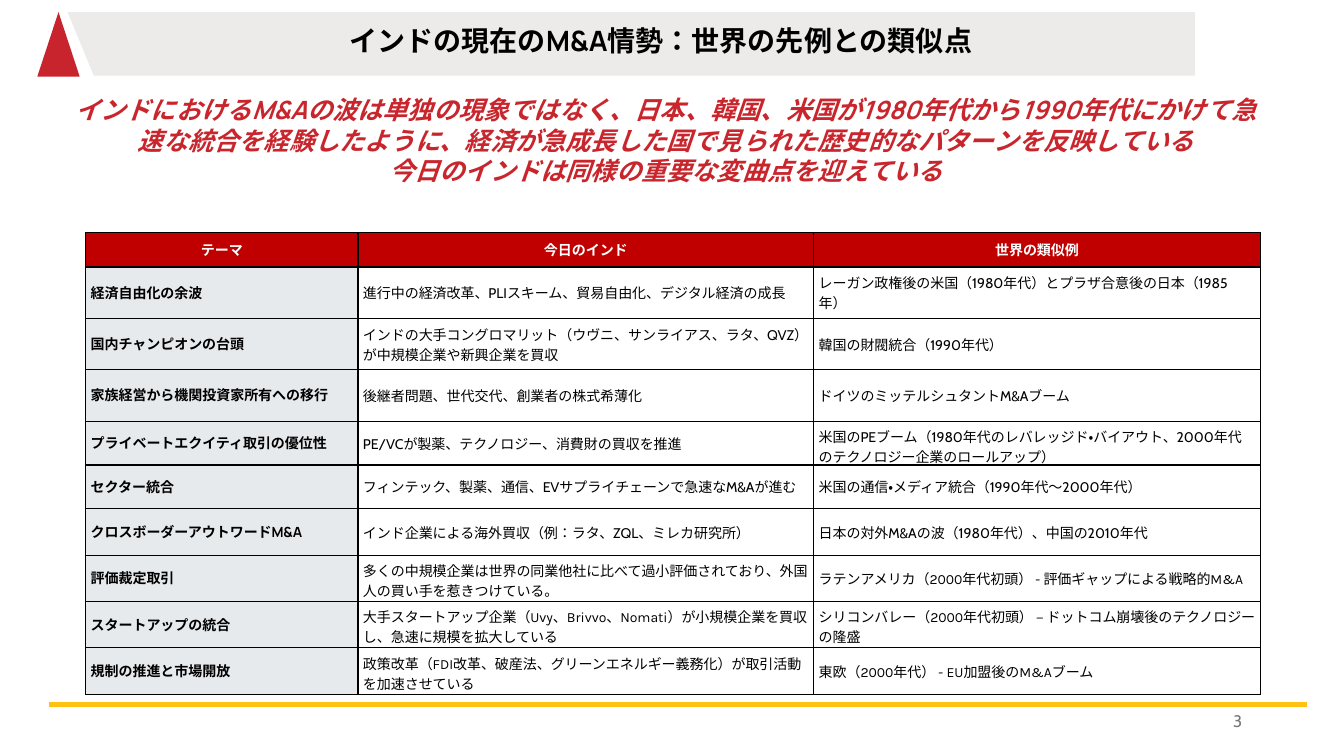
from lxml.etree import SubElement
from pptx import Presentation
from pptx.dml.color import RGBColor
from pptx.enum.lang import MSO_LANGUAGE_ID as LANGUAGE
from pptx.enum.shapes import MSO_CONNECTOR, MSO_SHAPE
from pptx.enum.text import MSO_ANCHOR as ANCHOR, PP_ALIGN as ALIGN
from pptx.oxml import parse_xml
from pptx.oxml.ns import nsdecls, qn
from pptx.util import Inches, Pt

TITLE = "インドの現在のM&A情勢：世界の先例との類似点"
MESSAGE = [
    "インドにおけるM&Aの波は単独の現象ではなく、日本、韓国、米国が1980年代から1990年代にかけて急速な統合を経験したように、経済が急成長した国で見られた歴史的なパターンを反映している",
    "今日のインドは同様の重要な変曲点を迎えている",
]
PAGE_NUMBER = "3"
HEADINGS = ("テーマ", "今日のインド", "世界の類似例")
# theme, India today, global parallel, row height, body font
THEMES = [
    ("経済自由化の余波", "進行中の経済改革、PLIスキーム、貿易自由化、デジタル経済の成長",
     "レーガン政権後の米国（1980年代）とプラザ合意後の日本（1985年）", 0.51, "Cabin"),
    ("国内チャンピオンの台頭",
     "インドの大手コングロマリット（ウヴニ、サンライアス、ラタ、QVZ）が中規模企業や新興企業を買収",
     "韓国の財閥統合（1990年代）", 0.51, "Cabin"),
    ("家族経営から機関投資家所有への移行", "後継者問題、世代交代、創業者の株式希薄化",
     "ドイツのミッテルシュタントM&Aブーム", 0.51, "Cabin"),
    ("プライベートエクイティ取引の優位性", "PE/VCが製薬、テクノロジー、消費財の買収を推進",
     "米国のPEブーム（1980年代のレバレッジド・バイアウト、2000年代のテクノロジー企業のロールアップ）",
     0.43, "Cabin"),
    ("セクター統合", "フィンテック、製薬、通信、EVサプライチェーンで急速なM&Aが進む",
     "米国の通信・メディア統合（1990年代～2000年代）", 0.43, "Cabin"),
    ("クロスボーダーアウトワードM&A", "インド企業による海外買収（例：ラタ、ZQL、ミレカ研究所）",
     "日本の対外M&Aの波（1980年代）、中国の2010年代", 0.46, "Cabin"),
    ("評価裁定取引", "多くの中規模企業は世界の同業他社に比べて過小評価されており、外国人の買い手を惹きつけている。",
     "ラテンアメリカ（2000年代初頭） - 評価ギャップによる戦略的M&A", 0.46, "Karla"),
    ("スタートアップの統合",
     "大手スタートアップ企業（Uvy、Brivvo、Nomati）が小規模企業を買収し、急速に規模を拡大している",
     "シリコンバレー（2000年代初頭） – ドットコム崩壊後のテクノロジーの隆盛", 0.46, "Karla"),
    ("規制の推進と市場開放",
     "政策改革（FDI改革、破産法、グリーンエネルギー義務化）が取引活動を加速させている",
     "東欧（2000年代） - EU加盟後のM&Aブーム", 0.46, "Karla"),
]
COLUMN_WIDTHS = (2.7, 4.52, 4.43)
HEADING_HEIGHT = 0.34
BANNER = [(11.85, 0.12), (0.67, 0.12), (0.93, 0.75), (11.85, 0.75)]
MARGINS = ("margin_left", "margin_top", "margin_right", "margin_bottom")


def rgb(code):
    return RGBColor.from_string(code)


def style(paragraph, text, align, font, size, color, **flags):
    paragraph.alignment = align
    run = paragraph.add_run()
    run.text = text
    formats = {"name": font, "size": Pt(size), "language_id": LANGUAGE.JAPANESE}
    for key, value in {**formats, **flags}.items():
        setattr(run.font, key, value)
    run.font.color.rgb = rgb(color)
    if font == "Manrope":
        SubElement(run.font._element, qn("a:ea"), typeface=font)


def add_text(box, lines, align, font, size, color, **flags):
    frame = slide.shapes.add_textbox(*map(Inches, box)).text_frame
    frame.word_wrap = True
    for index, line in enumerate(lines):
        paragraph = frame.add_paragraph() if index else frame.paragraphs[0]
        style(paragraph, line, align, font, size, color, **flags)
    return frame


def paint(shape, color):
    shape.shadow.inherit = False
    shape.fill.solid()
    shape.fill.fore_color.rgb = rgb(color)
    shape.line.fill.background()


def fill_cell(cell, text, fill, align, font, color, bold):
    for margin in MARGINS:
        setattr(cell, margin, Inches(0.05))
    cell.vertical_anchor = ANCHOR.MIDDLE
    style(cell.text_frame.paragraphs[0], text, align, font, 10, color, bold=bold)
    properties = cell._tc.get_or_add_tcPr()
    for side in ("lnL", "lnR", "lnT", "lnB"):
        properties.append(parse_xml(
            f'<a:{side} {nsdecls("a")} w="12700"><a:solidFill>'
            f'<a:srgbClr val="000000"/></a:solidFill></a:{side}>'))
    cell.fill.solid()
    cell.fill.fore_color.rgb = rgb(fill)


deck = Presentation()
deck.slide_width, deck.slide_height = Inches(13.33), Inches(7.5)
slide = deck.slides.add_slide(deck.slide_layouts[6])

outline = slide.shapes.build_freeform(*map(Inches, BANNER[0]), scale=1.0)
outline.add_line_segments([tuple(map(Inches, point)) for point in BANNER[1:]])
paint(outline.convert_to_shape(), "ECEBEA")
marker = slide.shapes.add_shape(
    MSO_SHAPE.ISOSCELES_TRIANGLE, *map(Inches, (0.37, 0.12, 0.42, 0.64)))
paint(marker, "C7242D")

footer_rule = slide.shapes.add_connector(
    MSO_CONNECTOR.STRAIGHT, *map(Inches, (0.49, 6.99, 12.96, 6.99)))
footer_rule.line.color.rgb = rgb("FFC212")
footer_rule.line.width = Pt(3)
SubElement(footer_rule._element.spPr, qn("a:effectLst"))

title = add_text((1.41, 0.26, 10.29, 0.62), [TITLE], ALIGN.CENTER,
                 "Manrope", 20, "000000", bold=True)
for margin, inset in zip(MARGINS, (0, 0.01, 0, 0)):
    setattr(title, margin, Inches(inset))
title.paragraphs[0].line_spacing = 0.9

heights = [HEADING_HEIGHT] + [height for *_, height, _ in THEMES]
table = slide.shapes.add_table(
    len(heights), len(COLUMN_WIDTHS), Inches(0.85), Inches(2.31),
    Inches(sum(COLUMN_WIDTHS)), Inches(sum(heights))).table
for column, width in zip(table.columns, COLUMN_WIDTHS):
    column.width = Inches(width)
for row, height in zip(table.rows, heights):
    row.height = Inches(height)
for column, heading in enumerate(HEADINGS):
    fill_cell(table.cell(0, column), heading, "C00000", ALIGN.CENTER,
              "Manrope", "FFFFFF", True)
for row, (theme, india, parallel, _, font) in enumerate(THEMES, 1):
    fill_cell(table.cell(row, 0), theme, "E7EAED", ALIGN.LEFT,
              "Manrope", "000000", True)
    for column, text in enumerate((india, parallel), 1):
        fill_cell(table.cell(row, column), text, "FFFFFF", ALIGN.LEFT,
                  font, "000000", False)

add_text((0.63, 0.89, 11.95, 1.31), MESSAGE, ALIGN.CENTER,
         "Manrope", 18, "C8252C", bold=True, italic=True)
page = add_text((9.42, 6.95, 3, 0.4), [PAGE_NUMBER], ALIGN.RIGHT,
                "Cabin", 12, "797979")
page.vertical_anchor = ANCHOR.MIDDLE

deck.save("out.pptx")
